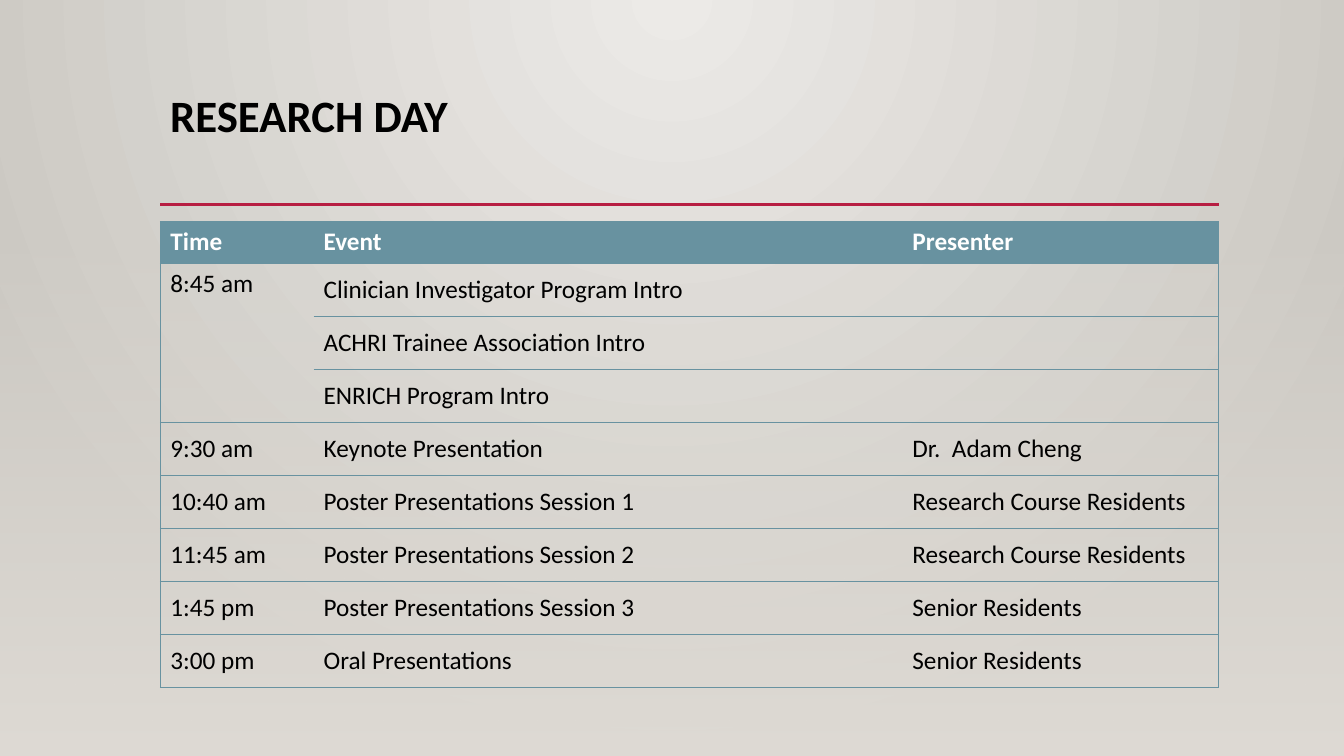
from lxml import etree
from pptx import Presentation
from pptx.dml.color import RGBColor
from pptx.enum.shapes import MSO_CONNECTOR, MSO_SHAPE
from pptx.enum.text import MSO_ANCHOR
from pptx.oxml.ns import qn
from pptx.util import Inches, Pt

STRAIGHT = MSO_CONNECTOR.STRAIGHT
RECTANGLE = MSO_SHAPE.RECTANGLE
TOP, MIDDLE = MSO_ANCHOR.TOP, MSO_ANCHOR.MIDDLE

FONT = "Calibri"
TEAL, RED, SAND = "6892A0", "B71E42", "DFDBD5"
BLACK, WHITE = "000000", "FFFFFF"
NO_STYLE = "{2D5ABB26-0587-4C30-8999-92F81FD0307C}"

LEFT, WIDTH = Inches(1.59), Inches(10.5)
TABLE_TOP, TABLE_HEIGHT, HEADER_HEIGHT = Inches(2.2), Inches(4.62), Inches(0.41)
COLUMN_WIDTHS = [1.52, 5.84, 3.14]

SCHEDULE = [
    ("Time", "Event", "Presenter"),
    ("8:45 am", "Clinician Investigator Program Intro", ""),
    ("", "ACHRI Trainee Association Intro", ""),
    ("", "ENRICH Program Intro", ""),
    ("9:30 am", "Keynote Presentation", "Dr.  Adam Cheng"),
    ("10:40 am", "Poster Presentations Session 1", "Research Course Residents"),
    ("11:45 am", "Poster Presentations Session 2", "Research Course Residents"),
    ("1:45 pm", "Poster Presentations Session 3", "Senior Residents"),
    ("3:00 pm", "Oral Presentations", "Senior Residents"),
]


def color(value):
    return RGBColor.from_string(value)


def set_gradient(fill, first, last):
    fill.gradient()
    for stop, position, value in zip(fill.gradient_stops, (0, 1), (first, last)):
        stop.position = position
        stop.color.rgb = color(value)
    fill.gradient_angle = 270


prs = Presentation()
prs.slide_width, prs.slide_height = Inches(13.33), Inches(7.5)
slide = prs.slides.add_slide(prs.slide_layouts[6])

# Background: a glow from the top centre
set_gradient(slide.background.fill, "ECEAE7", "CAC7C1")
direction = next(slide.element.iter(qn("a:lin")))
glow = etree.Element(qn("a:path"), path="circle")
etree.SubElement(glow, qn("a:fillToRect"), l="43000", t="0", r="43000", b="100000")
direction.getparent().replace(direction, glow)

# Floor: fades in from clear to sand
floor_top = Inches(2.21)
floor = slide.shapes.add_shape(
    RECTANGLE, 0, floor_top, prs.slide_width, prs.slide_height - floor_top)
floor.shadow.inherit = False
floor.line.fill.background()
set_gradient(floor.fill, SAND, SAND)
clear_stop = next(floor.element.iter(qn("a:srgbClr")))
etree.SubElement(clear_stop, qn("a:alpha"), val="0")

# Title and the rule below it
title = slide.shapes.add_textbox(LEFT, Inches(0.88), WIDTH, Inches(1.15)).text_frame
title.word_wrap = True
title.vertical_anchor = TOP
heading = title.paragraphs[0]
heading.text = "RESEARCH DAY"
heading.line_spacing = 0.9
heading.font.name, heading.font.size, heading.font.bold = FONT, Pt(32), True
heading.font.color.rgb = color(BLACK)

rule_y = Inches(2.03)
rule = slide.shapes.add_connector(STRAIGHT, LEFT, rule_y, LEFT + WIDTH, rule_y)
rule.line.color.rgb = color(RED)
rule.line.width = Pt(2.5)
etree.SubElement(rule.element.spPr, qn("a:effectLst"))

# Schedule table
schedule = slide.shapes.add_table(
    len(SCHEDULE), len(COLUMN_WIDTHS), LEFT, TABLE_TOP, WIDTH, TABLE_HEIGHT).table
next(schedule._tbl.iter(qn("a:tableStyleId"))).text = NO_STYLE
schedule.horz_banding = False
for column, width in zip(schedule.columns, COLUMN_WIDTHS):
    column.width = Inches(width)
event_height = (TABLE_HEIGHT - HEADER_HEIGHT) // (len(SCHEDULE) - 1)
for r, row in enumerate(schedule.rows):
    row.height = event_height if r else HEADER_HEIGHT
schedule.cell(1, 0).merge(schedule.cell(3, 0))

for r, entries in enumerate(SCHEDULE):
    for c, entry in enumerate(entries):
        cell = schedule.cell(r, c)
        is_header = r == 0

        # Outer sides, and lines between rows
        edges = ["a:lnL"] if c == 0 else []
        if c == len(entries) - 1:
            edges.append("a:lnR")
        if not cell.is_spanned:
            edges += ["a:lnT", "a:lnB"]
        for edge in edges:
            border = etree.SubElement(
                cell._tc.get_or_add_tcPr(), qn(edge), w=str(Pt(0.75)))
            ink = etree.SubElement(border, qn("a:solidFill"))
            etree.SubElement(ink, qn("a:srgbClr"), val=TEAL)

        if is_header:
            cell.fill.solid()
            cell.fill.fore_color.rgb = color(TEAL)
        else:
            cell.fill.background()

        cell.vertical_anchor = TOP if is_header or cell.is_merge_origin else MIDDLE
        label = cell.text_frame.paragraphs[0]
        label.text = entry
        label.font.name, label.font.size, label.font.bold = FONT, Pt(18), is_header
        label.font.color.rgb = color(WHITE if is_header else BLACK)

prs.save("out.pptx")
